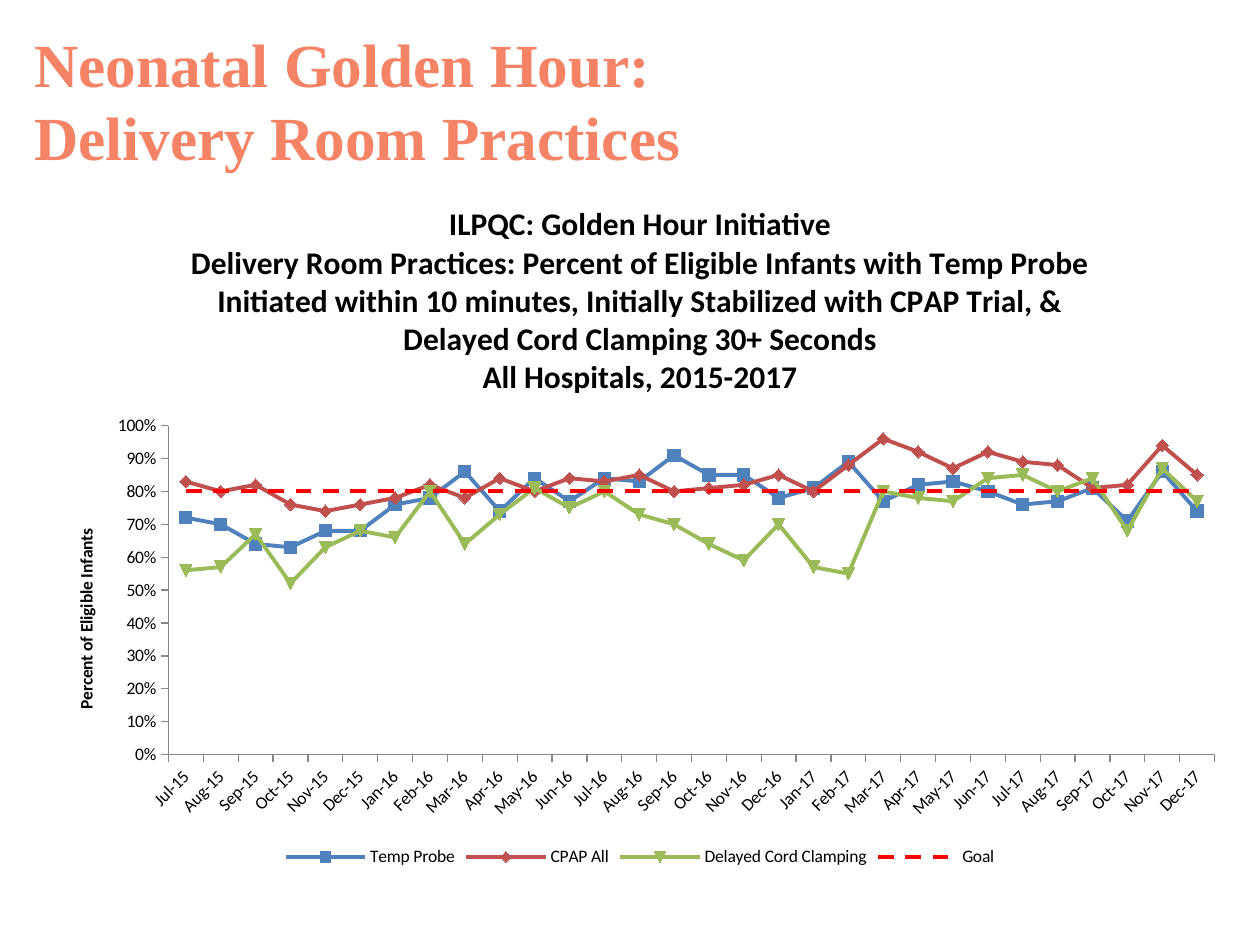
from lxml import etree
from pptx import Presentation, util as u
from pptx.chart.data import CategoryChartData
from pptx.dml.color import RGBColor
from pptx.enum import chart as ch, dml, text
from pptx.oxml import parse_xml
from pptx.oxml.ns import nsdecls

COLORS = {"title": "F58466", "text": "000000", "axis": "868686",
          "probe": "4F81BD", "cpap": "C0504D", "cord": "9BBB59", "goal": "FF0000"}
MONTHS = "Jan Feb Mar Apr May Jun Jul Aug Sep Oct Nov Dec".split()
DATES = [f"{MONTHS[n % 12]}-{15 + n // 12}" for n in range(6, 36)]
SERIES = [
    ("Temp Probe", "probe",
     [72, 70, 64, 63, 68, 68, 76, 78, 86, 74, 84, 77, 84, 83, 91,
      85, 85, 78, 81, 89, 77, 82, 83, 80, 76, 77, 81, 71, 86, 74]),
    ("CPAP All", "cpap",
     [83, 80, 82, 76, 74, 76, 78, 82, 78, 84, 80, 84, 83, 85, 80,
      81, 82, 85, 80, 88, 96, 92, 87, 92, 89, 88, 81, 82, 94, 85]),
    ("Delayed Cord Clamping", "cord",
     [56, 57, 67, 52, 63, 68, 66, 80, 64, 73, 81, 75, 80, 73, 70,
      64, 59, 70, 57, 55, 80, 78, 77, 84, 85, 80, 84, 68, 87, 77]),
    ("Goal", "goal", [80] * len(DATES)),
]
HEADING = ("ILPQC: Golden Hour Initiative\n"
           "Delivery Room Practices: Percent of Eligible Infants with Temp Probe "
           "Initiated within 10 minutes, Initially Stabilized with CPAP Trial, & "
           "Delayed Cord Clamping 30+ Seconds\n"
           "All Hospitals, 2015-2017")


def rgb(name):
    return RGBColor.from_string(COLORS[name])


def layout(x, y, w=None, h=None):
    """Manual chart layout in fractions of the chart; a size makes it an inner plot."""
    parts = [("xMode", "edge"), ("yMode", "edge"), ("x", x), ("y", y)]
    if w:
        parts = [("layoutTarget", "inner")] + parts + [("w", w), ("h", h)]
    body = "".join(f'<c:{tag} val="{val}"/>' for tag, val in parts)
    return parse_xml(f'<c:layout {nsdecls("c")}><c:manualLayout>{body}'
                     '</c:manualLayout></c:layout>')


def place(parent, new, index):
    """Put a layout in a chart part, in place of the one it has."""
    for old in parent.findall(new.tag):
        parent.remove(old)
    parent.insert(index, new)


class Deck:
    serif, sans = "Times New Roman", "Calibri"

    def __init__(self, prs):
        self.slide = prs.slides.add_slide(prs.slide_layouts[5])

    def style(self, font, size, color="text", bold=False, face=None):
        font.name, font.size, font.bold = face or self.sans, u.Pt(size), bold
        font.color.rgb = rgb(color)

    def title(self, words, *box):
        shape = self.slide.shapes.title
        shape.left, shape.top, shape.width, shape.height = map(u.Inches, box)
        frame = shape.text_frame
        frame.text = words
        frame.vertical_anchor = text.MSO_ANCHOR.MIDDLE
        para = frame.paragraphs[0]
        para.alignment = text.PP_ALIGN.LEFT
        for run in para.runs:
            self.style(run.font, 35, "title", True, self.serif)

    def label(self, title, words, size):
        title.text_frame.text = words
        for para in title.text_frame.paragraphs:
            for run in para.runs:
                self.style(run.font, size, bold=True)

    def chart(self, *box):
        data = CategoryChartData(number_format="0%")
        data.categories = DATES
        for name, _, vals in SERIES:
            data.add_series(name, [v / 100 for v in vals])
        chart = self.slide.shapes.add_chart(
            ch.XL_CHART_TYPE.LINE_MARKERS, *map(u.Inches, box), data).chart
        self.style(chart.font, 10)
        chart.has_title = True
        self.label(chart.chart_title, HEADING, 18)
        chart.chart_title.include_in_layout = False
        chart.has_legend = True
        chart.legend.position = ch.XL_LEGEND_POSITION.BOTTOM
        chart.legend.include_in_layout = False
        plot = chart.plots[0]
        plot.vary_by_categories = False
        for line, (_, color, _) in zip(plot.series, SERIES):
            self.line(line, color)
        self.axes(chart)
        area = chart._chartSpace.chart.plotArea
        place(area, layout(0.106, 0.356, 0.874, 0.475), 0)

    def line(self, line, color):
        line.smooth = False
        line.format.line.color.rgb = rgb(color)
        line.format.line.width = u.Pt(2.25)
        if color == "goal":
            line.format.line.dash_style = dml.MSO_LINE.DASH
            line.marker.style = ch.XL_MARKER_STYLE.NONE
            return
        line.marker.size = 7
        fmt = line.marker.format
        fmt.fill.solid()
        fmt.fill.fore_color.rgb = rgb(color)
        fmt.line.color.rgb = rgb(color)

    def axes(self, chart):
        cat, val = chart.category_axis, chart.value_axis
        for axis in (cat, val):
            axis.has_major_gridlines = False
            axis.major_tick_mark = ch.XL_TICK_MARK.OUTSIDE
            axis.format.line.color.rgb = rgb("axis")
            self.style(axis.tick_labels.font, 10)
        cat._element.txPr.bodyPr.set("rot", "-2700000")
        val.minimum_scale, val.maximum_scale, val.major_unit = 0, 1, 0.1
        val.tick_labels.number_format = "0%"
        val.tick_labels.number_format_is_linked = False
        val.has_title = True
        self.label(val.axis_title, "Percent of Eligible Infants", 10)
        frame = val.axis_title.text_frame
        frame._txBody.bodyPr.set("rot", "-5400000")
        place(val.axis_title._element, layout(0.025, 0.5), 1)


def main():
    prs = Presentation()
    prs.slide_width, prs.slide_height = u.Inches(10), u.Inches(7.5)
    deck = Deck(prs)
    deck.title("Neonatal Golden Hour:\vDelivery Room Practices", 0.17, 0, 9, 1.58)
    deck.chart(0.33, 1.42, 9.5, 5.5)
    prs.save("out.pptx")


if __name__ == "__main__":
    main()
